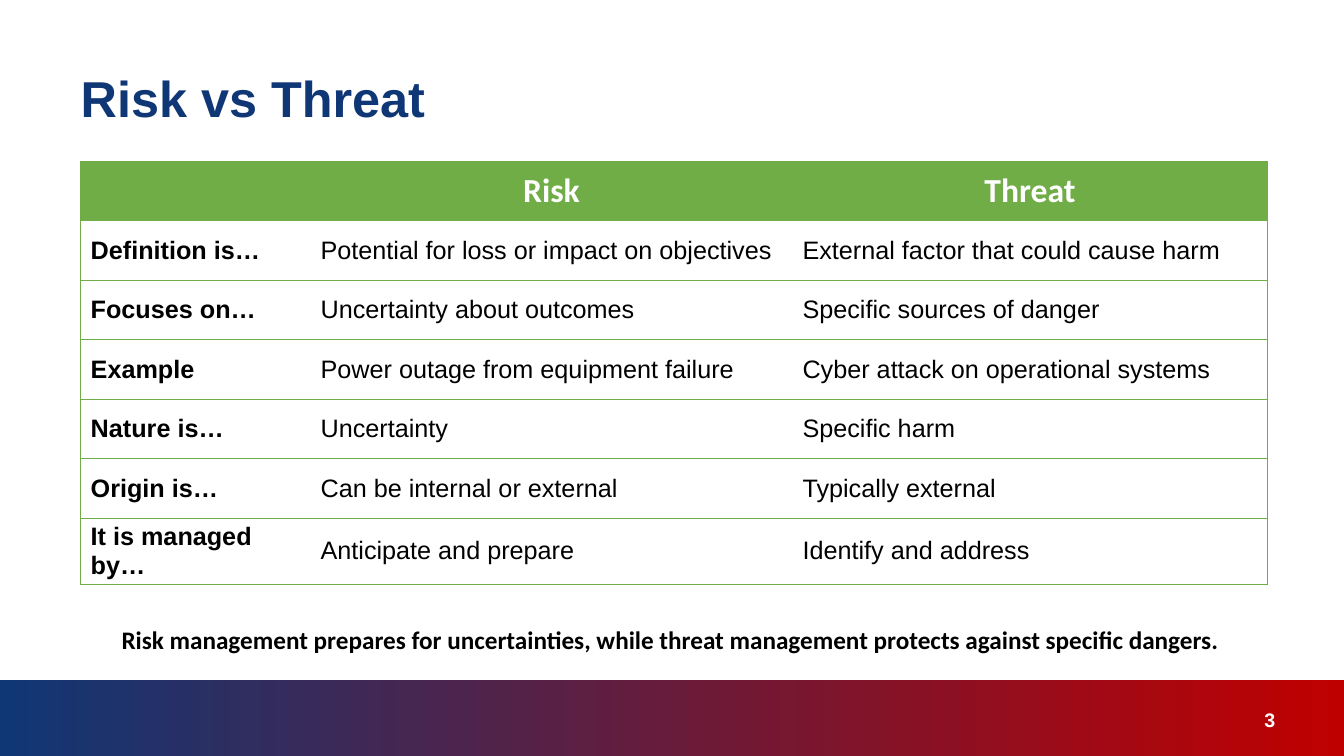
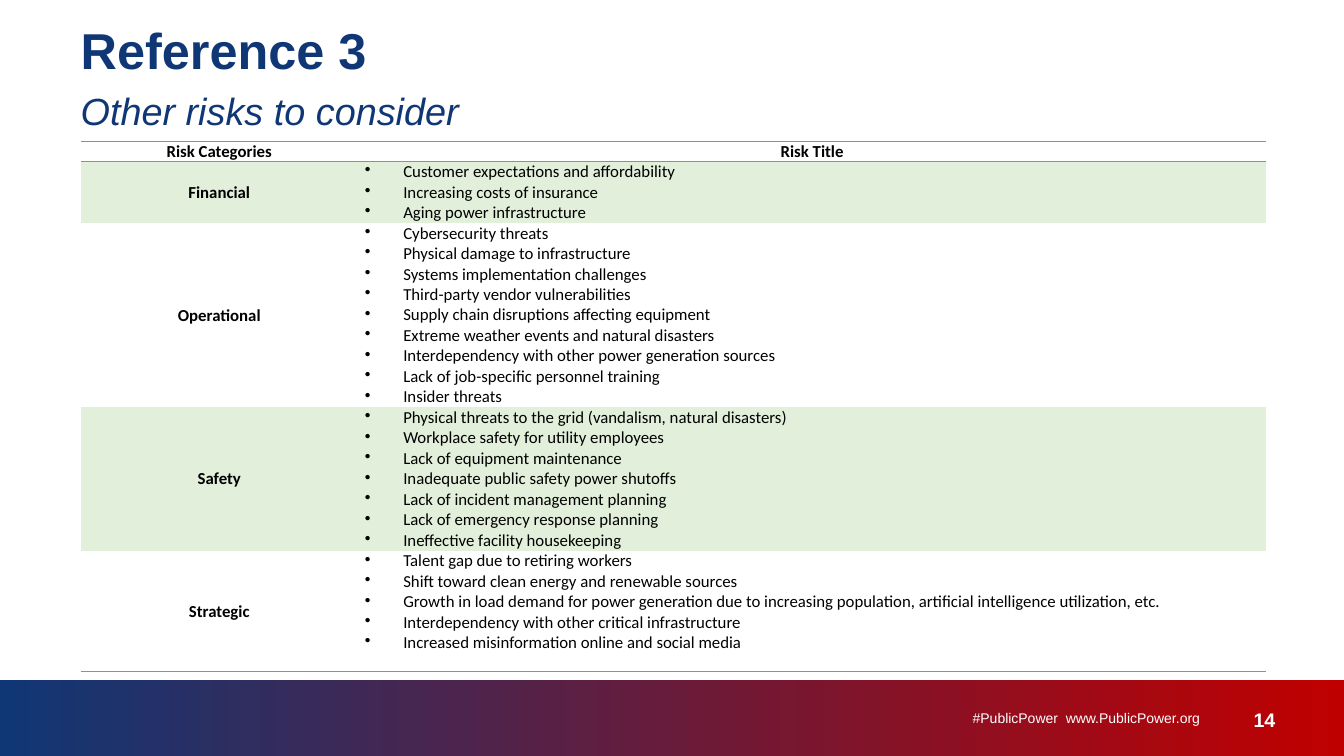
from dataclasses import dataclass

from lxml.etree import SubElement
from pptx import Presentation
from pptx.dml.color import RGBColor as Rgb
from pptx.enum.shapes import MSO_SHAPE as Preset
from pptx.enum.text import MSO_ANCHOR as Anchor
from pptx.enum.text import MSO_AUTO_SIZE as AutoSize
from pptx.enum.text import PP_ALIGN as Align
from pptx.oxml.ns import qn
from pptx.util import Inches, Pt


@dataclass(frozen=True)
class Theme:
    navy: str = "103775"
    red: str = "C00000"
    green: str = "70AD47"
    pale_green: str = "E2EFDA"
    white: str = "FFFFFF"
    black: str = "000000"
    sans: str = "Arial"
    table_font: str = "Calibri"
    title_size: float = 36
    subtitle_size: float = 27
    title_spacing: float = 38
    heading_size: float = 24
    body_size: float = 18
    number_size: float = 14
    list_size: float = 12
    footer_size: float = 10
    left: float = 0.8
    width: float = 11.76
    bullet_indent: float = 0.38
    plain_table: str = "{2D5ABB26-0587-4C30-8999-92F81FD0307C}"


theme = Theme()


def write(frame, text, *, size, font=theme.sans, color=theme.black, bold=False,
          italic=False, align=Align.LEFT, bullet=False, para=None):
    """Add text to para, or as the next paragraph of the frame."""
    if para is None:
        para = frame.add_paragraph() if frame.text else frame.paragraphs[0]
        para.alignment = align
    if bullet:
        properties = para._p.get_or_add_pPr()
        properties.set("marL", str(Inches(theme.bullet_indent)))
        properties.set("indent", str(-Inches(theme.bullet_indent)))
        SubElement(properties, qn("a:buChar"), char="•")
    span = para.add_run()
    span.text = text
    span.font.name, span.font.size = font, Pt(size)
    span.font.bold, span.font.italic = bold, italic
    span.font.color.rgb = Rgb.from_string(color)
    return para


def style_cell(cell, sides, line_width, fill=None):
    """Draw green lines on the sides (out of L, R, T, B) and set the fill."""
    properties = cell._tc.get_or_add_tcPr()
    for side in "LRTB":
        if side in sides:
            line = SubElement(properties, qn(f"a:ln{side}"), w=str(Pt(line_width)))
            solid = SubElement(line, qn("a:solidFill"))
            SubElement(solid, qn("a:srgbClr"), val=theme.green)
    if fill:
        cell.fill.solid()
        cell.fill.fore_color.rgb = Rgb.from_string(fill)
    else:
        cell.fill.background()


# Content
comparison = [
    ("", "Risk", "Threat"),
    ("Definition is…", "Potential for loss or impact on objectives",
     "External factor that could cause harm"),
    ("Focuses on…", "Uncertainty about outcomes", "Specific sources of danger"),
    ("Example", "Power outage from equipment failure",
     "Cyber attack on operational systems"),
    ("Nature is…", "Uncertainty", "Specific harm"),
    ("Origin is…", "Can be internal or external", "Typically external"),
    ("It is managed by…", "Anticipate and prepare", "Identify and address"),
]
categories = [
    ("Financial", [
        "Customer expectations and affordability",
        "Increasing costs of insurance",
        "Aging power infrastructure"]),
    ("Operational", [
        "Cybersecurity threats",
        "Physical damage to infrastructure",
        "Systems implementation challenges",
        "Third-party vendor vulnerabilities",
        "Supply chain disruptions affecting equipment",
        "Extreme weather events and natural disasters",
        "Interdependency with other power generation sources",
        "Lack of job-specific personnel training",
        "Insider threats"]),
    ("Safety", [
        "Physical threats to the grid (vandalism, natural disasters)",
        "Workplace safety for utility employees",
        "Lack of equipment maintenance",
        "Inadequate public safety power shutoffs",
        "Lack of incident management planning",
        "Lack of emergency response planning",
        "Ineffective facility housekeeping"]),
    ("Strategic", [
        "Talent gap due to retiring workers",
        "Shift toward clean energy and renewable sources",
        "Growth in load demand for power generation due to increasing population, "
        "artificial intelligence utilization, etc.",
        "Interdependency with other critical infrastructure",
        "Increased misinformation online and social media"]),
]
outlines = [
    dict(title="Risk vs Threat", subtitle=None, number="3", title_top=0.74,
         title_height=0.73, table_top=1.6, columns=[2.28, 4.78, 4.71],
         rows=[0.59] * len(comparison)),
    dict(title="Reference 3", subtitle="Other risks to consider", number="14",
         title_top=0.26, title_height=1.02, table_top=1.4, columns=[2.75, 9.01],
         rows=[0.2, 0.6, 1.79, 1.39, 1.2]),
]

deck = Presentation()
deck.slide_width, deck.slide_height = Inches(13.33), Inches(7.5)
layout = deck.slide_layouts[5]

# Title, page number and empty table of each page
pages, tables = [], []
for outline in outlines:
    page = deck.slides.add_slide(layout)
    title = page.shapes.title
    title.left, title.top = Inches(theme.left), Inches(outline["title_top"])
    title.width, title.height = Inches(theme.width), Inches(outline["title_height"])
    frame = title.text_frame
    frame.margin_left = frame.margin_right = frame.margin_top = frame.margin_bottom = 0
    frame.vertical_anchor, frame.auto_size = Anchor.TOP, AutoSize.NONE
    para = write(frame, outline["title"], size=theme.title_size,
                 color=theme.navy, bold=True)
    para.line_spacing = Pt(theme.title_spacing)
    if outline["subtitle"]:
        para.add_line_break()
        write(frame, outline["subtitle"], size=theme.subtitle_size,
              color=theme.navy, italic=True, para=para)

    holder = page.shapes.add_table(
        len(outline["rows"]), len(outline["columns"]), Inches(theme.left),
        Inches(outline["table_top"]), Inches(theme.width), Inches(sum(outline["rows"])))
    for style in holder.element.iter(qn("a:tableStyleId")):
        style.text = theme.plain_table
    table = holder.table
    table.horz_banding = False
    for column, width in zip(table.columns, outline["columns"]):
        column.width = Inches(width)
    for row, height in zip(table.rows, outline["rows"]):
        row.height = Inches(height)

    number = page.shapes.add_textbox(Inches(12.12), Inches(7.02), Inches(0.53), Inches(0.33))
    frame = number.text_frame
    frame.margin_left = frame.margin_right = frame.margin_top = frame.margin_bottom = 0
    write(frame, outline["number"], size=theme.number_size, color=theme.white,
          bold=True, align=Align.RIGHT)
    pages.append(page)
    tables.append(table)

comparison_page, reference_page = pages
comparison_table, reference_table = tables

# Gradient band, moved to the layout that both pages share
band = comparison_page.shapes.add_shape(
    Preset.RECTANGLE, 0, Inches(6.75), deck.slide_width, Inches(0.78))
band.shadow.inherit = False
band.line.fill.background()
band.fill.gradient()
band.fill.gradient_angle = 180
for stop, color in zip(band.fill.gradient_stops, (theme.red, theme.navy)):
    stop.color.rgb = Rgb.from_string(color)
band.element.nvSpPr.cNvPr.set("id", "20")
layout.shapes.element.insert(2, band.element)

# Risk and threat comparison
for row, texts in enumerate(comparison):
    for column, text in enumerate(texts):
        cell = comparison_table.cell(row, column)
        cell.vertical_anchor = Anchor.MIDDLE
        sides = "B" + ("T" if row == 0 else "") + {0: "L", 2: "R"}.get(column, "")
        style_cell(cell, sides, 0.5, theme.green if row == 0 else None)
        if row == 0 and text:
            write(cell.text_frame, text, size=theme.heading_size, font=theme.table_font,
                  color=theme.white, bold=True, align=Align.CENTER)
        elif text:
            write(cell.text_frame, text, size=theme.body_size, bold=column == 0)

# Takeaway under the comparison
takeaway = comparison_page.shapes.add_textbox(
    Inches(0.77), Inches(6.14), Inches(theme.width), Inches(0.4))
takeaway.text_frame.word_wrap = True
write(takeaway.text_frame,
      "Risk management prepares for uncertainties, while threat management "
      "protects against specific dangers.",
      size=theme.body_size, font=theme.table_font, bold=True, align=Align.CENTER)

# Risk categories
for row, (category, risks) in enumerate([("Risk Categories", "Risk Title"), *categories]):
    sides = {0: "TB", len(categories): "B"}.get(row, "")
    for column in range(2):
        cell = reference_table.cell(row, column)
        cell.margin_left = cell.margin_right = Inches(0.07)
        cell.margin_top = cell.margin_bottom = 0
        style_cell(cell, sides, 1, theme.pale_green if row % 2 else None)
        if column == 0 and row > 0:
            cell.vertical_anchor = Anchor.MIDDLE
        if column == 0 or row == 0:
            write(cell.text_frame, risks if column else category, size=theme.list_size,
                  font=theme.table_font, bold=True, align=Align.CENTER)
        else:
            for risk in risks:
                write(cell.text_frame, risk, size=theme.list_size,
                      font=theme.table_font, bullet=True)

# Footer of the reference page
footer = reference_page.shapes.add_textbox(
    Inches(9.17), Inches(7.04), Inches(2.73), Inches(0.3))
frame = footer.text_frame
frame.word_wrap = True
frame.margin_left = frame.margin_right = frame.margin_top = frame.margin_bottom = 0
write(frame, "#PublicPower  www.PublicPower.org", size=theme.footer_size,
      color=theme.white, align=Align.RIGHT)

deck.save("out.pptx")
